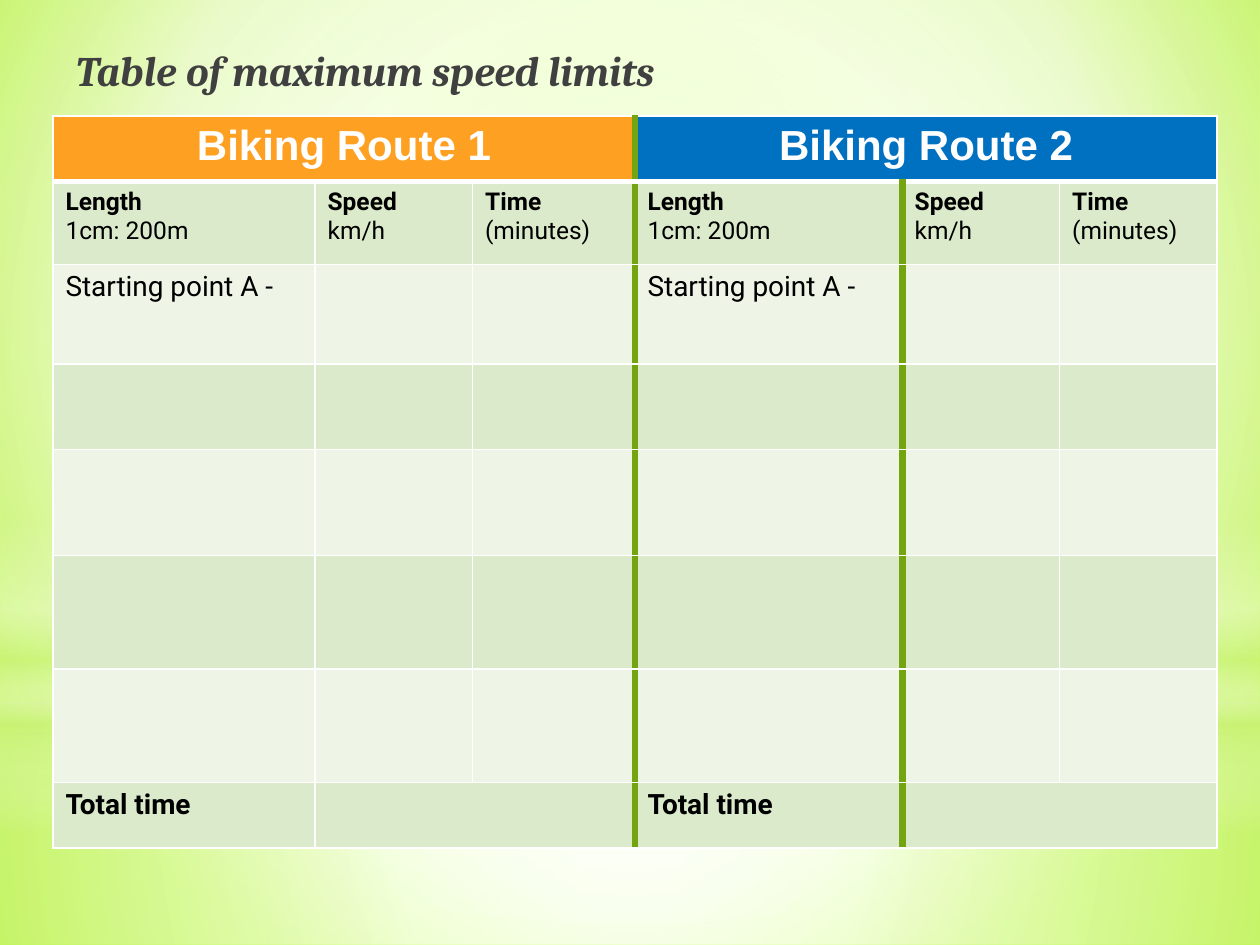
from lxml import etree
from pptx import Presentation
from pptx.dml.color import RGBColor
from pptx.enum import shapes, text
from pptx.oxml.ns import qn
from pptx.util import Inches, Pt

rgb = RGBColor.from_string


def set_gradient(fill, element, stops, center=None):
    fill.gradient()
    grad = element.find(".//" + qn("a:gradFill"))
    for child in list(grad):
        grad.remove(child)
    gs_lst = etree.SubElement(grad, qn("a:gsLst"))
    for pos, color, alpha in stops:
        gs = etree.SubElement(gs_lst, qn("a:gs"), pos=str(pos * 1000))
        clr = etree.SubElement(gs, qn("a:srgbClr"), val=color)
        if alpha < 100:
            etree.SubElement(clr, qn("a:alpha"), val=str(alpha * 1000))
    if center:
        radial = etree.SubElement(grad, qn("a:path"), path="circle")
        rect = {side: str(v * 1000) for side, v in zip("ltrb", center)}
        etree.SubElement(radial, qn("a:fillToRect"), **rect)
    else:
        etree.SubElement(grad, qn("a:lin"), ang="5400000", scaled="0")


def set_border(cell, side, color, width):
    ln = etree.SubElement(cell._tc.get_or_add_tcPr(), qn("a:ln" + side), w=str(Pt(width)))
    fill = etree.SubElement(ln, qn("a:solidFill"))
    etree.SubElement(fill, qn("a:srgbClr"), val=color)


prs = Presentation()
prs.slide_width, prs.slide_height = Inches(10), Inches(7.5)
s = prs.slides.add_slide(prs.slide_layouts[5])
set_gradient(s.background.fill, s._element,
             [(0, "CAFF60", 100), (60, "F7FFE7", 100), (100, "B7FF29", 100)], (20, 10, 20, 60))

RECT, OVAL = shapes.MSO_SHAPE.RECTANGLE, shapes.MSO_SHAPE.OVAL
middle = (50, 50, 50, 50)
glows = [
    (RECT, 5.58, 1.92, [(0, "FFFFFF", 91), (37, "FFFFFF", 76), (100, "CAF278", 79)], middle),
    (RECT, 0, 5.58, [(0, "FFFFFF", 89), (48, "FFFFFF", 62), (100, "CAF278", 79)], middle),
    (RECT, 4.12, 2.5, [(0, "FFFFFF", 0), (29, "FFFFFF", 30), (45, "CAF278", 40),
                       (55, "FFFFFF", 26), (65, "CAF278", 60), (100, "FFFFFF", 0)], None),
    (OVAL, 1.75, 5.58, [(0, "FFFFFF", 100), (56, "FFFFFF", 0)], middle),
]
for kind, top, height, stops, center in glows:
    sp = s.shapes.add_shape(kind, 0, Inches(top), Inches(10), Inches(height))
    sp.shadow.inherit = False
    sp.line.fill.background()
    set_gradient(sp.fill, sp._element, stops, center)

title = s.shapes.title
s.shapes._spTree.append(title._element)
title.left, title.top, title.width, title.height = (Inches(v) for v in (0.5, 0.3, 9, 0.55))
tf = title.text_frame
tf.text = "Table of maximum speed limits"
tf.vertical_anchor = text.MSO_ANCHOR.TOP
p = tf.paragraphs[0]
p.alignment = text.PP_ALIGN.LEFT
p.font.name, p.font.size = "Cambria", Pt(24)
p.font.bold = p.font.italic = True
p.font.color.rgb = rgb("404040")

cols = [2.08, 1.25, 1.29, 2.12, 1.25, 1.25]
rows = [0.52, 0.66, 0.79, 0.68, 0.84, 0.9, 0.9, 0.52]
last = len(rows) - 1
table = s.shapes.add_table(len(rows), len(cols), Inches(0.42), Inches(0.92),
                           Inches(sum(cols)), Inches(sum(rows))).table
table.first_row = table.horz_banding = False
for col, width in zip(table.columns, cols):
    col.width = Inches(width)
for row, height in zip(table.rows, rows):
    row.height = Inches(height)

for c in (0, 3):
    table.cell(0, c).merge(table.cell(0, c + 2))
    table.cell(last, c + 1).merge(table.cell(last, c + 2))

for r in range(len(rows)):
    for c in range(len(cols)):
        cell = table.cell(r, c)
        if cell.is_spanned:
            continue
        end = c + (cell.span_width if cell.is_merge_origin else 1)
        for side, edge in (("L", c), ("R", end)):
            green = edge == 3 or (edge == 4 and r > 0)
            set_border(cell, side, *(("74A510", 4.5) if green else ("FFFFFF", 1)))
        set_border(cell, "T", "FFFFFF", 3 if r == 1 else 1)
        set_border(cell, "B", "FFFFFF", 3 if r == 0 else 1)
        cell.fill.solid()
        if r == 0:
            cell.fill.fore_color.rgb = rgb("FEA022" if c == 0 else "0070C0")
        else:
            cell.fill.fore_color.rgb = rgb("DCEACC" if r % 2 else "EEF5E7")

headings = ["Length\n1cm: 200m", "Speed\nkm/h", "Time\n(minutes)"]
for route, c in ((1, 0), (2, 3)):
    entries = [(0, c, f"Biking Route {route}", 24), (2, c, "Starting point Α -", 16),
               (last, c, "Total time", 16)]
    entries += [(1, c + i, heading, 14) for i, heading in enumerate(headings)]
    for r, col, words, size in entries:
        tf = table.cell(r, col).text_frame
        tf.text = words
        for i, p in enumerate(tf.paragraphs):
            p.font.name = "Arial" if r == 0 else "Roboto"
            p.font.size = Pt(size)
            p.font.bold = r != 2 and i == 0
            p.font.color.rgb = rgb("FFFFFF" if r == 0 else "000000")
            if r == 0:
                p.alignment = text.PP_ALIGN.CENTER

prs.save("out.pptx")
